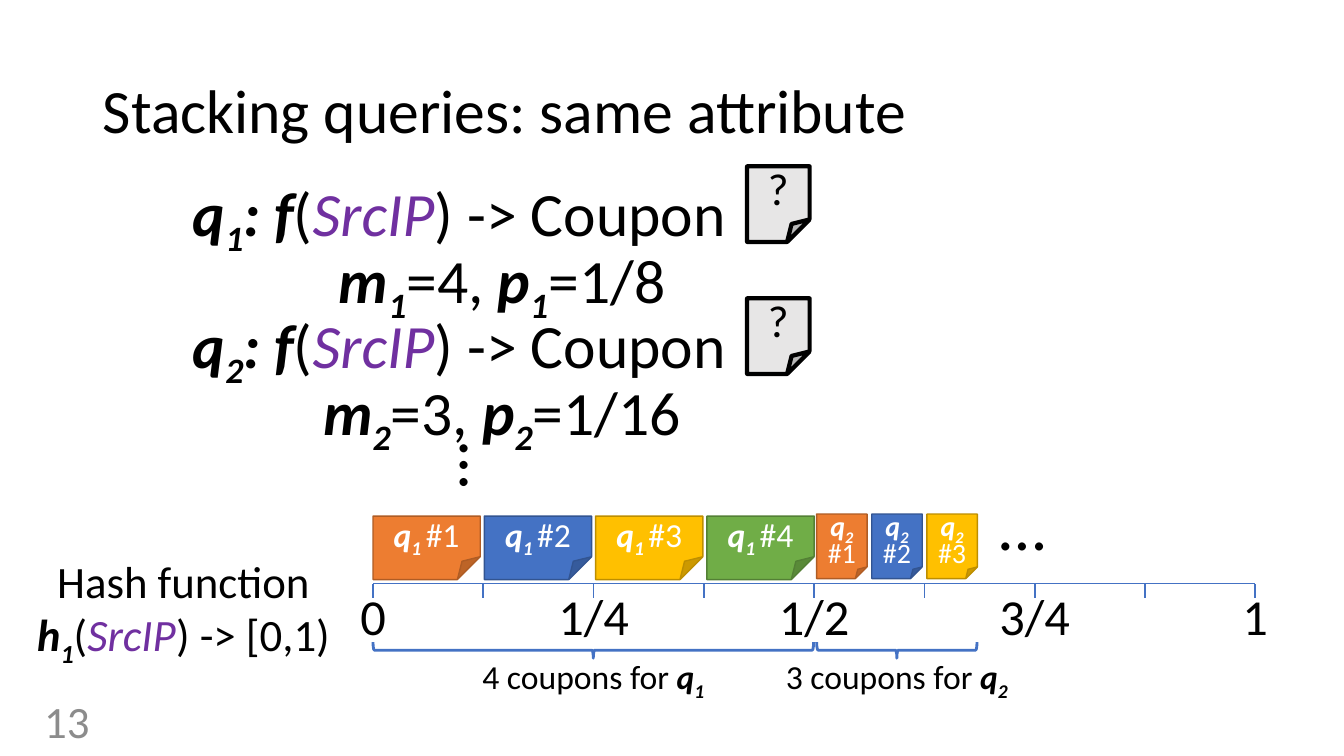
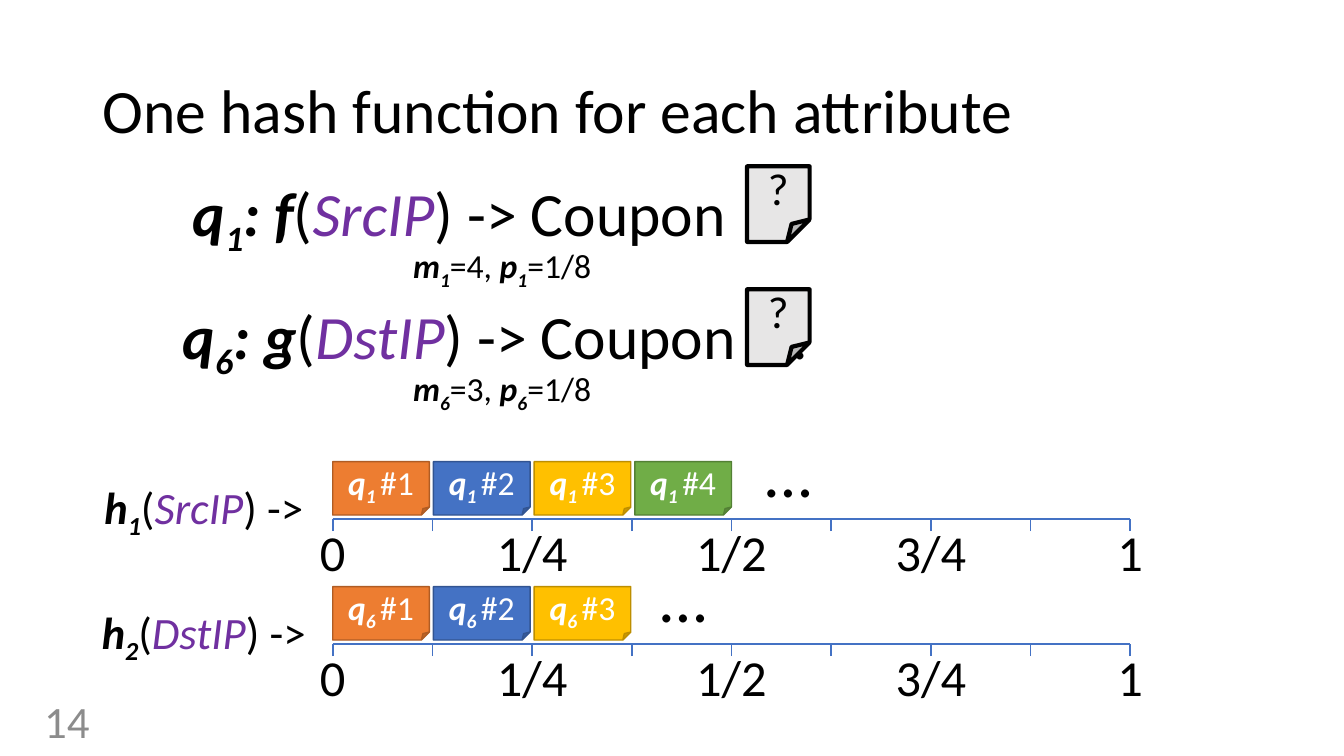
from dataclasses import dataclass, replace

import lxml.etree
import pptx
import pptx.dml.color
import pptx.enum.shapes
import pptx.enum.text
import pptx.oxml.ns
import pptx.shapes.autoshape
import pptx.slide
import pptx.text.text
import pptx.util

Inches = pptx.util.Inches
Pt = pptx.util.Pt
Shape = pptx.shapes.autoshape.Shape
Page = pptx.slide.Slide
ALIGN = pptx.enum.text.PP_ALIGN
ANCHOR = pptx.enum.text.MSO_ANCHOR
PRESET = pptx.enum.shapes.MSO_SHAPE

FONT = "Calibri"
BLACK = "000000"
WHITE = "FFFFFF"
GRAY = "8C8C8C"
PURPLE = "7030A0"
BLUE = "4472C4"
COUPON_COLORS = [
    ("ED7D31", "AF5C24"),
    (BLUE, "325491"),
    ("FFC000", "BD8E00"),
    ("70AD47", "538035"),
]
TICK_LABELS = {0: "0", 2: "1/4", 4: "1/2", 6: "3/4", 8: "1"}
QUERY_SPACING = 0.8


@dataclass
class Area:
    left: float
    top: float
    width: float
    height: float

    def lengths(self) -> list[int]:
        return [Inches(v) for v in (self.left, self.top, self.width, self.height)]


@dataclass
class Span:
    text: str
    size: float = 32
    color: str = BLACK
    strong: bool = False
    italic: bool = False
    subscript: bool = False
    tracking: float = 0


Line = list[Span]


@dataclass
class Query:
    top: float
    height: float
    index: str
    function: str
    attribute: str
    coupons: int
    chance: str
    detail_size: float


@dataclass
class Scale:
    left: float
    right: float
    top: float
    tick: float

    @property
    def step(self) -> float:
        return (self.right - self.left) / 8


@dataclass
class CouponRow:
    query: str
    count: int
    left: float
    top: float
    width: float
    height: float
    pitch: float
    fold: float
    size: float


@dataclass
class Bracket:
    left: float
    right: float
    count: int
    query: str
    caption_width: float


def rgb(color: str) -> pptx.dml.color.RGBColor:
    return pptx.dml.color.RGBColor.from_string(color)


def symbol(name: str, index: str, size: float, color: str = BLACK) -> Line:
    letter = Span(name, size, color, strong=True, italic=True)
    return [letter, replace(letter, text=index, subscript=True)]


def write_line(para: pptx.text.text._Paragraph, line: Line) -> None:
    for item in line:
        span = para.add_run()
        span.text = item.text
        span.font.name = FONT
        span.font.size = Pt(item.size)
        span.font.bold = item.strong
        span.font.italic = item.italic
        span.font.color.rgb = rgb(item.color)
        properties = span._r.get_or_add_rPr()
        if item.subscript:
            properties.set("baseline", "-25000")
        if item.tracking:
            properties.set("spc", str(int(item.tracking * 100)))


def add_text(page: Page, area: Area, lines: list[Line], align: ALIGN = ALIGN.CENTER,
             anchor: ANCHOR = ANCHOR.TOP) -> Shape:
    box = page.shapes.add_textbox(*area.lengths())
    frame = box.text_frame
    frame.word_wrap = True
    frame.vertical_anchor = anchor
    for number, line in enumerate(lines):
        para = frame.add_paragraph() if number else frame.paragraphs[0]
        para.alignment = align
        write_line(para, line)
    return box


def set_fold(note: Shape, fold: float) -> None:
    guides = next(note.element.iter(pptx.oxml.ns.qn("a:prstGeom"))).get_or_add_avLst()
    lxml.etree.SubElement(guides, pptx.oxml.ns.qn("a:gd"), name="adj",
                          fmla=f"val {round(fold * 100000)}")


def add_note(page: Page, area: Area, fold: float, fill: str, outline: str,
             weight: float, line: Line) -> None:
    note = page.shapes.add_shape(PRESET.FOLDED_CORNER, *area.lengths())
    set_fold(note, fold)
    note.shadow.inherit = False
    note.fill.solid()
    note.fill.fore_color.rgb = rgb(fill)
    note.line.color.rgb = rgb(outline)
    note.line.width = Pt(weight)
    note.text_frame.word_wrap = True
    note.text_frame.vertical_anchor = ANCHOR.MIDDLE
    para = note.text_frame.paragraphs[0]
    para.alignment = ALIGN.CENTER
    para.line_spacing = QUERY_SPACING
    write_line(para, line)


def add_query(page: Page, query: Query) -> None:
    area = Area(1.11, query.top, 7.74, query.height)
    head = symbol("q", query.index, 44) + [
        Span(f": {query.function}", 44, strong=True, italic=True),
        Span("(", 44),
        Span(query.attribute, 44, PURPLE, italic=True),
        Span(") -> Coupon", 44),
        Span(" ", 44, tracking=30),
        Span(". ", 44),
    ]
    size = query.detail_size
    detail = (symbol("m", query.index, size) + [Span(f"={query.coupons}, ", size)]
              + symbol("p", query.index, size) + [Span(f"={query.chance}", size)])
    para = add_text(page, area, [head]).text_frame.paragraphs[0]
    para.line_spacing = QUERY_SPACING
    para.add_line_break()
    write_line(para, detail)
    add_note(page, Area(7.41, query.top - 0.11, 0.62, 0.75), 0.36, "E7E6E6", BLACK, 3,
             [Span("?")])


def add_rule(page: Page, x1: float, y1: float, x2: float, y2: float) -> None:
    rule = page.shapes.add_connector(pptx.enum.shapes.MSO_CONNECTOR.STRAIGHT,
                                     Inches(x1), Inches(y1), Inches(x2), Inches(y2))
    rule.line.color.rgb = rgb(BLUE)
    rule.line.width = Pt(1.2)
    lxml.etree.SubElement(rule.element.spPr, pptx.oxml.ns.qn("a:effectLst"))


def add_scale(page: Page, scale: Scale) -> None:
    add_rule(page, scale.left, scale.top, scale.right, scale.top)
    width = 1.5 * scale.step
    for number in range(9):
        x = scale.left + number * scale.step
        add_rule(page, x, scale.top + scale.tick, x, scale.top)
        if number in TICK_LABELS:
            area = Area(x - width / 2, scale.top - 0.03, width, 0.65 * scale.step)
            add_text(page, area, [[Span(TICK_LABELS[number], 36)]])


def add_coupons(page: Page, row: CouponRow) -> None:
    for number, (fill, outline) in enumerate(COUPON_COLORS[:row.count]):
        area = Area(row.left + number * row.pitch, row.top, row.width, row.height)
        line = symbol("q", f"{row.query} ", row.size, WHITE)
        line.append(Span(f"#{number + 1}", row.size, WHITE))
        add_note(page, area, row.fold, fill, outline, 1, line)


def wide_coupons(scale: Scale, query: str, count: int, rise: float, height: float,
                 fold: float) -> CouponRow:
    return CouponRow(query, count, scale.left, scale.top - rise, scale.step - 0.03,
                     height, scale.step + 0.01, fold, 24)


def add_bracket(page: Page, bracket: Bracket) -> None:
    center = (bracket.left + bracket.right) / 2
    length = bracket.right - bracket.left
    area = Area(center - 0.08, 6.45 - length / 2, 0.16, length)
    brace = page.shapes.add_shape(PRESET.LEFT_BRACE, *area.lengths())
    brace.rotation = 270
    brace.shadow.inherit = False
    brace.fill.background()
    brace.line.color.rgb = rgb(BLUE)
    brace.line.width = Pt(2)
    caption = Area(center - bracket.caption_width / 2, 6.46, bracket.caption_width, 0.5)
    words = [Span(f"{bracket.count} coupons for ", 24)]
    add_text(page, caption, [words + symbol("q", bracket.query, 24)])


def add_ellipsis(page: Page, area: Area, rotation: float = 0) -> None:
    add_text(page, area, [[Span("…", 48)]]).rotation = rotation


def hash_call(index: str, attribute: str, ending: str) -> Line:
    return symbol("h", index, 32) + [
        Span("("), Span(attribute, color=PURPLE, italic=True), Span(ending)]


def add_page(deck, title: str, number: int) -> Page:
    page = deck.slides.add_slide(deck.slide_layouts[5])
    box = page.shapes.title
    box.left, box.top, box.width, box.height = Area(0.92, 0.4, 11.5, 1.45).lengths()
    box.text_frame.auto_size = pptx.enum.text.MSO_AUTO_SIZE.NONE
    box.text_frame.vertical_anchor = ANCHOR.MIDDLE
    para = box.text_frame.paragraphs[0]
    para.alignment = ALIGN.LEFT
    para.line_spacing = 0.9
    write_line(para, [Span(title, 44)])
    add_text(page, Area(0.34, 6.95, 3, 0.4), [[Span(str(number), color=GRAY)]],
             ALIGN.LEFT, ANCHOR.MIDDLE)
    return page


def build_stacking_page(deck) -> None:
    page = add_page(deck, "Stacking queries: same attribute", 13)
    add_query(page, Query(1.76, 1.3, "1", "f", "SrcIP", 4, "1/8", 44))
    add_query(page, Query(3.07, 1.3, "2", "f", "SrcIP", 3, "1/16", 44))
    add_text(page, Area(0.24, 5.44, 3.16, 1.18),
             [[Span("Hash function")], hash_call("1", "SrcIP", ") -> [0,1)")])
    scale = Scale(3.7, 12.45, 5.79, 0.14)
    add_scale(page, scale)
    add_coupons(page, wide_coupons(scale, "1", 4, 0.67, 0.63, 0.36))
    add_coupons(page, CouponRow("2", 3, 8.1, 5.1, 0.5, 0.64, scale.step / 2, 0.23, 20))
    add_bracket(page, Bracket(3.7, 8.07, 4, "1", 3.96))
    add_bracket(page, Bracket(8.1, 9.69, 3, "2", 2.57))
    add_ellipsis(page, Area(4.09, 4.16, 1.48, 0.91), 90)
    add_ellipsis(page, Area(9.4, 4.75, 1.48, 0.91))


def build_attribute_page(deck) -> None:
    page = add_page(deck, "One hash function for each attribute", 14)
    queries = [
        Query(1.76, 1.02, "1", "f", "SrcIP", 4, "1/8", 24),
        Query(2.98, 1.02, "6", "g", "DstIP", 3, "1/8", 24),
    ]
    for number, (query, top, dots) in enumerate(zip(queries, (5.15, 6.39), (7.15, 6.11))):
        add_query(page, query)
        add_text(page, Area(0.55, top - 0.44, 2.94, 0.64),
                 [hash_call(str(number + 1), query.attribute, ") ->")])
        scale = Scale(3.3, 11.21, top, 0.12)
        add_scale(page, scale)
        add_coupons(page, wide_coupons(scale, query.index, query.coupons, 0.57, 0.53, 0.15))
        add_ellipsis(page, Area(dots, top - 0.93, 1.34, 0.77))


def main() -> None:
    deck = pptx.Presentation()
    deck.slide_width = Inches(13.33)
    deck.slide_height = Inches(7.5)
    build_stacking_page(deck)
    build_attribute_page(deck)
    deck.save("out.pptx")


if __name__ == "__main__":
    main()
